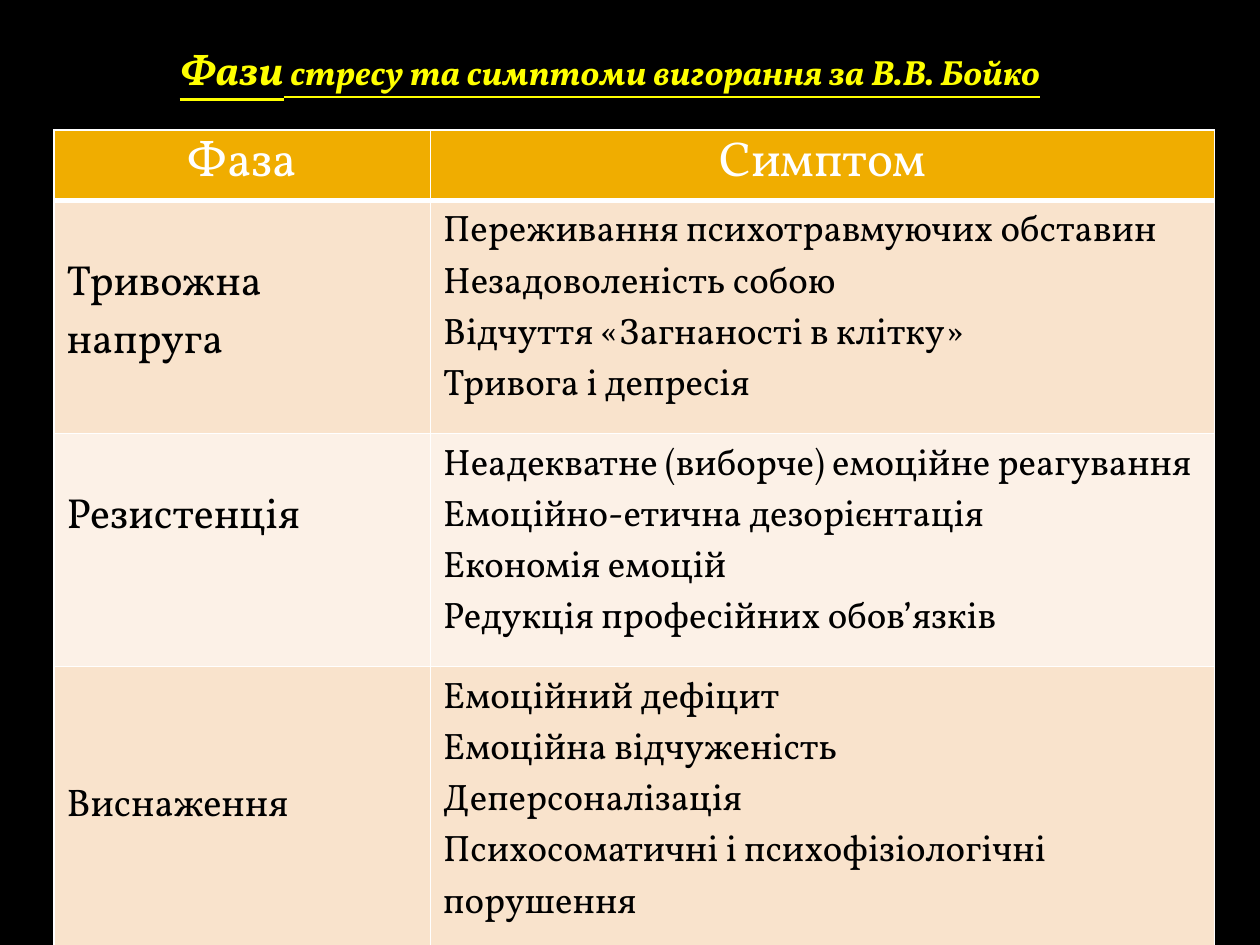
from lxml.etree import SubElement
from pptx import Presentation
from pptx.dml.color import RGBColor
from pptx.enum.text import MSO_ANCHOR, MSO_AUTO_SIZE, PP_ALIGN
from pptx.oxml.ns import qn
from pptx.util import Cm, Pt

FONT = "Vollkorn"
WHITE, BLACK, YELLOW = "FFFFFF", "000000", "FFFF00"
GOLD, PEACH, CREAM = "F0AD00", "F9E3CC", "FCF1E7"
WIDTHS = (7.59, 15.8)
HEIGHTS = (1.42, 4.7, 4.7, 5.72)

# phase, text size, top margin in cm, row colour, symptoms
PHASES = [
    ("Тривожна напруга", 24, 1.11, PEACH, [
        "Переживання психотравмуючих обставин",
        "Незадоволеність собою",
        "Відчуття «Загнаності в клітку»",
        "Тривога і депресія"]),
    ("Резистенція", 24, 1.11, CREAM, [
        "Неадекватне (виборче) емоційне реагування",
        "Емоційно-етична дезорієнтація",
        "Економія емоцій",
        "Редукція професійних обов’язків"]),
    ("Виснаження", 22, 2.28, PEACH, [
        "Емоційний дефіцит",
        "Емоційна відчуженість",
        "Деперсоналізація",
        "Психосоматичні і психофізіологічні порушення"]),
]


def color(code):
    return RGBColor.from_string(code)


def write(para, text, size, fill=BLACK, align=PP_ALIGN.LEFT, strong=False):
    """Add a run; strong makes it bold, italic and underlined."""
    para.alignment = align
    run = para.add_run()
    run.text = text
    font = run.font
    font.name, font.size = FONT, Pt(size)
    font.bold = font.italic = font.underline = strong
    font.color.rgb = color(fill)


def edge(cell, side, width):
    line = SubElement(cell._tc.get_or_add_tcPr(), qn(f"a:ln{side}"), w=str(Pt(width)))
    fill = SubElement(line, qn("a:solidFill"))
    SubElement(fill, qn("a:srgbClr"), val=WHITE)


def style(cell, fill, top=0.13, low=0.13, over=1, under=1):
    """Set borders, fill and vertical margins of a cell."""
    for side, width in (("L", 1), ("R", 1), ("T", over), ("B", under)):
        edge(cell, side, width)
    cell.fill.solid()
    cell.fill.fore_color.rgb = color(fill)
    cell.margin_top, cell.margin_bottom = Cm(top), Cm(low)
    cell.vertical_anchor = MSO_ANCHOR.TOP


def add_title(slide):
    title = slide.shapes.title
    title.left, title.top = Cm(1.9), Cm(0.74)
    title.width, title.height = Cm(20.8), Cm(1.27)
    frame = title.text_frame
    frame.auto_size = MSO_AUTO_SIZE.NONE
    frame.vertical_anchor = MSO_ANCHOR.TOP
    para = frame.paragraphs[0]
    for text, size in (("Фази", 24), (" стресу та симптоми вигорання за В.В. Бойко", 20)):
        write(para, text, size, YELLOW, PP_ALIGN.CENTER, strong=True)


def add_grid(slide):
    frame = slide.shapes.add_table(len(HEIGHTS), len(WIDTHS), Cm(1.09), Cm(2.62),
                                   Cm(sum(WIDTHS)), Cm(sum(HEIGHTS)))
    grid = frame.table
    for col, width in zip(grid.columns, WIDTHS):
        col.width = Cm(width)
    for row, height in zip(grid.rows, HEIGHTS):
        row.height = Cm(height)

    for col, text in enumerate(("Фаза", "Симптом")):
        cell = grid.cell(0, col)
        style(cell, GOLD, top=0, low=0, under=3)
        write(cell.text_frame.paragraphs[0], text, 28, WHITE, PP_ALIGN.CENTER)

    for row, (phase, size, top, fill, signs) in enumerate(PHASES, 1):
        over = 3 if row == 1 else 1
        left, right = grid.cell(row, 0), grid.cell(row, 1)
        style(left, fill, top=top, over=over)
        write(left.text_frame.paragraphs[0], phase, size)
        style(right, fill, over=over)
        body = right.text_frame
        for i, sign in enumerate(signs):
            write(body.add_paragraph() if i else body.paragraphs[0], sign, 21)


def main():
    deck = Presentation()
    deck.slide_width, deck.slide_height = Cm(25.4), Cm(19.05)
    slide = deck.slides.add_slide(deck.slide_layouts[5])
    back = slide.background.fill
    back.solid()
    back.fore_color.rgb = color(BLACK)
    add_title(slide)
    add_grid(slide)
    deck.save("out.pptx")


if __name__ == "__main__":
    main()
